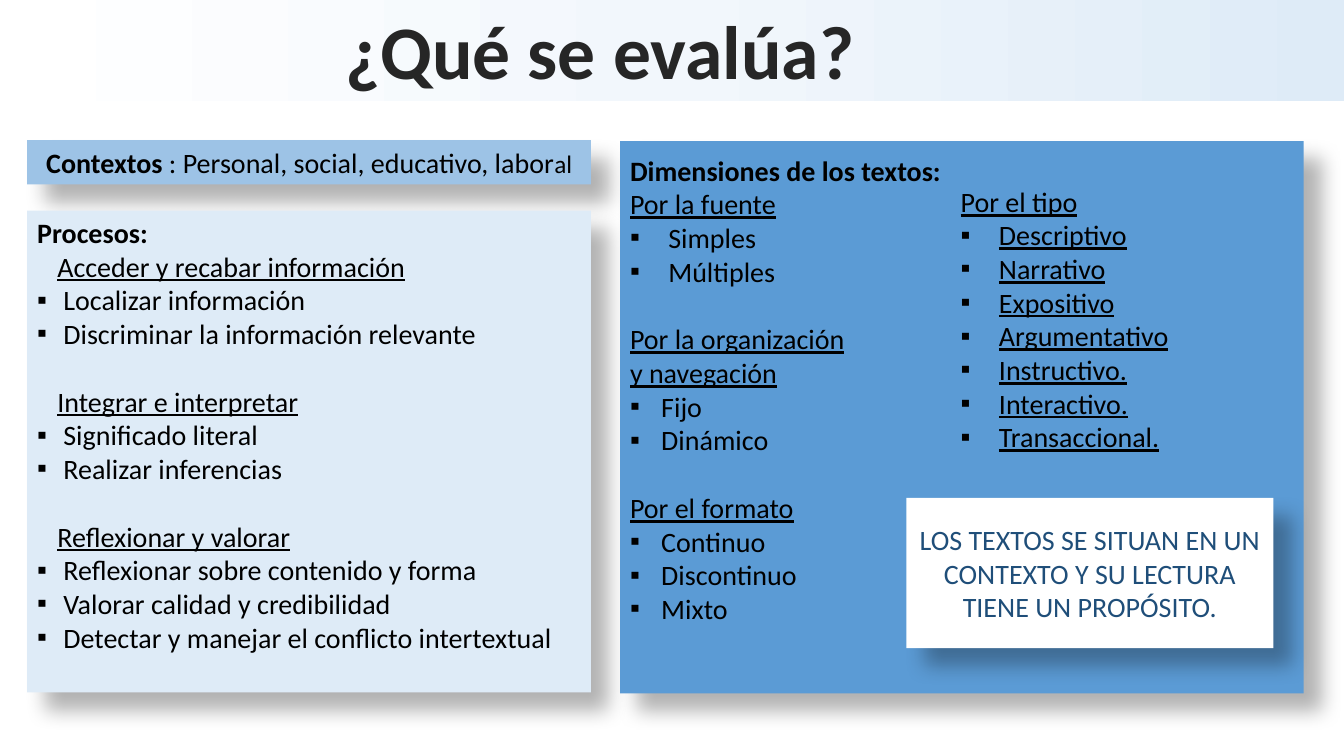
from dataclasses import dataclass

import pptx
import pptx.dml.color
import pptx.enum.shapes
import pptx.enum.text
import pptx.oxml
import pptx.oxml.ns
import pptx.util
from pptx.util import Inches

COLORS = {
    "black": "000000", "title": "262626", "white": "FFFFFF", "navy": "1F4E79",
    "pale": "DEEBF7", "mist": "F2F7FC", "light": "9DC3E6", "blue": "5B9BD5",
}
ALIGN = pptx.enum.text.PP_ALIGN
ANCHOR = pptx.enum.text.MSO_ANCHOR
NS = pptx.oxml.ns.nsdecls("a")
LINE_GAP = 24.4


@dataclass
class Panel:
    left: float
    top: float
    width: float
    height: float
    fill: str
    anchor: int = ANCHOR.TOP
    inset_top: float = 0.05


@dataclass
class Section:
    heading: str
    items: list[str]
    hang: float
    heading_indent: float = 0
    gap: float = 0
    underline_items: bool = False


def rgb(name: str) -> pptx.dml.color.RGBColor:
    return pptx.dml.color.RGBColor.from_string(COLORS[name])


def add_text(p, text: str, *, size: float = 20, color: str = "black",
             bold: bool = False, underline: bool = False):
    r = p.add_run()
    r.text = text
    r.font.name = "Calibri"
    r.font.size = pptx.util.Pt(size)
    r.font.bold = bold
    r.font.underline = underline
    r.font.color.rgb = rgb(color)
    return r


def set_indent(p, margin: float, first: float = 0, bullet: str = "") -> None:
    pPr = p._p.get_or_add_pPr()
    pPr.set("marL", str(Inches(margin)))
    pPr.set("indent", str(Inches(first)))
    if bullet:
        pPr.append(pptx.oxml.parse_xml(f'<a:buFont {NS} typeface="Arial"/>'))
        pPr.append(pptx.oxml.parse_xml(f'<a:buChar {NS} char="{bullet}"/>'))


def next_paragraph(tf):
    p = tf.paragraphs[0]
    if p.runs:
        p = tf.add_paragraph()
    p.alignment = ALIGN.LEFT
    return p


def add_section(tf, section: Section) -> None:
    for i, heading in enumerate(section.heading.split("\n")):
        p = next_paragraph(tf)
        if i == 0 and section.gap:
            p.space_before = pptx.util.Pt(section.gap)
        set_indent(p, section.heading_indent)
        add_text(p, heading, underline=True)
    for item in section.items:
        p = next_paragraph(tf)
        set_indent(p, section.hang, -section.hang, "▪")
        add_text(p, item, underline=section.underline_items)


def add_rect(s, left: float, top: float, width: float, height: float):
    sp = s.shapes.add_shape(pptx.enum.shapes.MSO_SHAPE.RECTANGLE, Inches(left),
                            Inches(top), Inches(width), Inches(height))
    sp.line.fill.background()
    sp.shadow.inherit = False
    return sp


def add_panel(s, panel: Panel):
    sp = add_rect(s, panel.left, panel.top, panel.width, panel.height)
    sp.fill.solid()
    sp.fill.fore_color.rgb = rgb(panel.fill)
    effects = sp.element.spPr.find(pptx.oxml.ns.qn("a:effectLst"))
    effects.append(pptx.oxml.parse_xml(
        f'<a:outerShdw {NS} blurRad="{pptx.util.Pt(15)}" dist="{pptx.util.Pt(18)}" '
        f'dir="2700000" algn="tl" rotWithShape="0"><a:srgbClr val="{COLORS["black"]}">'
        '<a:alpha val="30000"/></a:srgbClr></a:outerShdw>'))
    tf = sp.text_frame
    tf.word_wrap = True
    tf.vertical_anchor = panel.anchor
    tf.margin_top = Inches(panel.inset_top)
    return tf


def add_title(s) -> None:
    title = s.shapes.title
    title.left, title.top = Inches(2.95), Inches(-0.02)
    title.width, title.height = Inches(6), Inches(1.01)
    tf = title.text_frame
    tf.auto_size = pptx.enum.text.MSO_AUTO_SIZE.NONE
    tf.word_wrap = False
    tf.vertical_anchor = ANCHOR.MIDDLE
    p = tf.paragraphs[0]
    p.alignment = ALIGN.CENTER
    r = add_text(p, "¿Qué se evalúa?", size=54, color="title", bold=True)
    r.font._element.insert(0, pptx.oxml.parse_xml(
        f'<a:ln {NS} w="{pptx.util.Pt(1.06)}"><a:solidFill>'
        f'<a:srgbClr val="{COLORS["white"]}"/></a:solidFill></a:ln>'))


def add_band(s) -> None:
    band = add_rect(s, 0, 0, 13.33, 1)
    stops = "".join(
        f'<a:gs pos="{i * 50000}"><a:srgbClr val="{COLORS[name]}"/></a:gs>'
        for i, name in enumerate(("pale", "mist", "white")))
    geometry = band.element.spPr.find(pptx.oxml.ns.qn("a:prstGeom"))
    geometry.addnext(pptx.oxml.parse_xml(
        f'<a:gradFill {NS}><a:gsLst>{stops}</a:gsLst>'
        '<a:lin ang="10800000" scaled="0"/></a:gradFill>'))
    s.shapes.title.element.addprevious(band.element)


PROCESSES = [
    Section("Acceder y recabar información",
            ["Localizar información", "Discriminar la información relevante"], 0.26, 0.2),
    Section("Integrar e interpretar",
            ["Significado literal", "Realizar inferencias"], 0.26, 0.2, LINE_GAP),
    Section("Reflexionar y valorar",
            ["Reflexionar sobre contenido y forma", "Valorar calidad y credibilidad",
             "Detectar y manejar el conflicto intertextual"], 0.26, 0.2, LINE_GAP),
]
DIMENSIONS = [
    Section("Por la fuente", ["Simples", "Múltiples"], 0.38),
    Section("Por la organización\ny navegación", ["Fijo", "Dinámico"], 0.31, gap=LINE_GAP),
    Section("Por el formato", ["Continuo", "Discontinuo", "Mixto"], 0.31, gap=LINE_GAP),
]
TYPES = Section("Por el tipo",
                ["Descriptivo", "Narrativo", "Expositivo", "Argumentativo",
                 "Instructivo.", "Interactivo.", "Transaccional."],
                0.38, underline_items=True)


def main() -> None:
    prs = pptx.Presentation()
    prs.slide_width, prs.slide_height = Inches(13.33), Inches(7.5)
    s = prs.slides.add_slide(prs.slide_layouts.get_by_name("Title Only"))
    add_title(s)
    add_band(s)

    p = next_paragraph(add_panel(s, Panel(0.27, 1.39, 5.59, 0.44, "light", ANCHOR.MIDDLE)))
    set_indent(p, 0.09)
    add_text(p, "Contextos", bold=True)
    add_text(p, " : Personal, social, educativo, labor")
    add_text(p, "al", size=18)

    for panel, heading, sections in (
        (Panel(0.27, 2.09, 5.59, 4.78, "pale"), "Procesos:", PROCESSES),
        (Panel(6.15, 1.4, 6.78, 5.48, "blue", inset_top=0.12),
         "Dimensiones de los textos:", DIMENSIONS),
    ):
        tf = add_panel(s, panel)
        add_text(next_paragraph(tf), heading, bold=True)
        for section in sections:
            add_section(tf, section)

    types = s.shapes.add_textbox(Inches(9.43), Inches(1.78), Inches(3.3), Inches(2.8))
    types.text_frame.word_wrap = True
    add_section(types.text_frame, TYPES)

    p = next_paragraph(add_panel(s, Panel(8.99, 4.94, 3.64, 1.49, "white", ANCHOR.MIDDLE)))
    p.alignment = ALIGN.CENTER
    add_text(p, "LOS TEXTOS SE SITUAN EN UN CONTEXTO Y SU LECTURA TIENE UN PROPÓSITO.",
             color="navy")
    prs.save("out.pptx")


if __name__ == "__main__":
    main()
